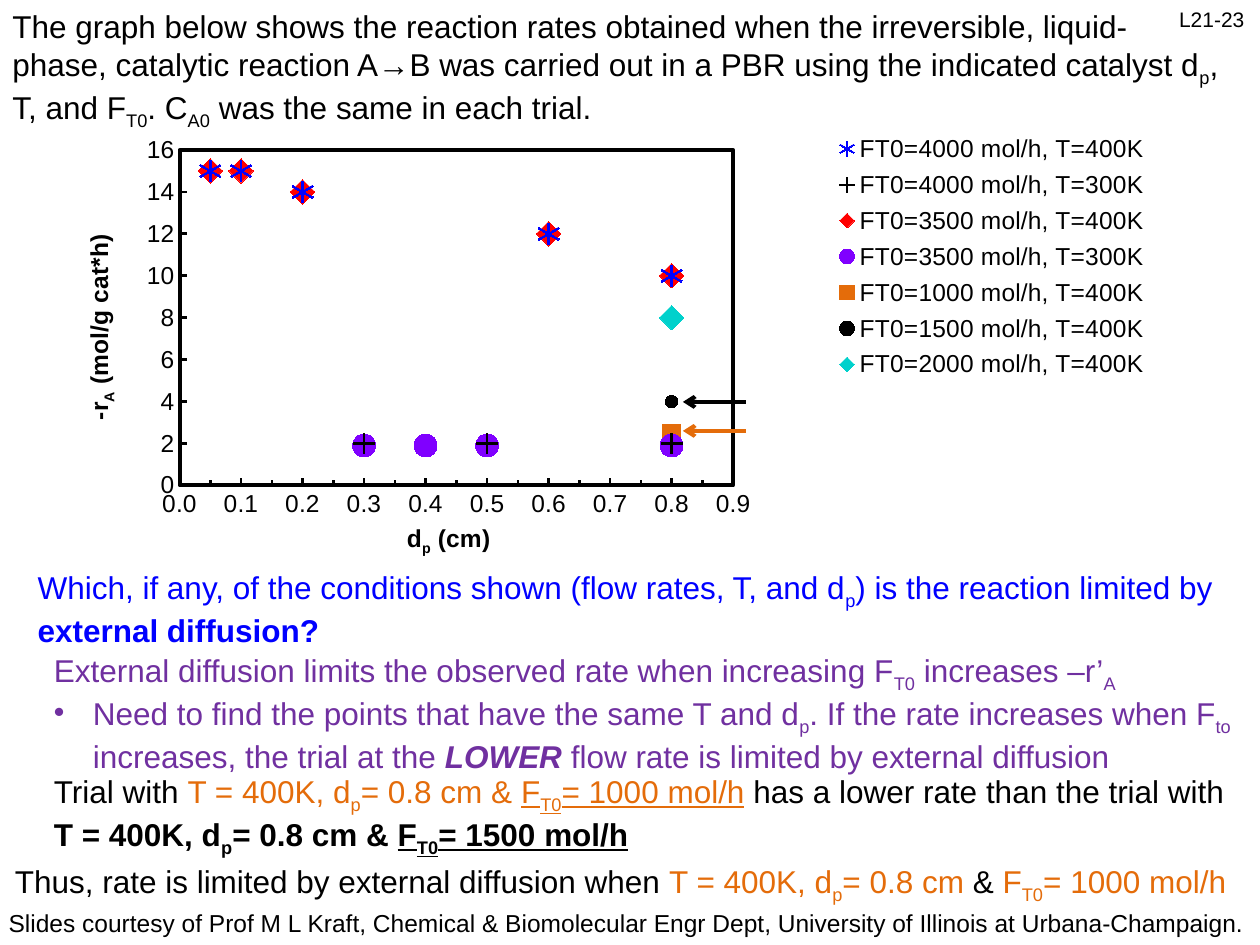
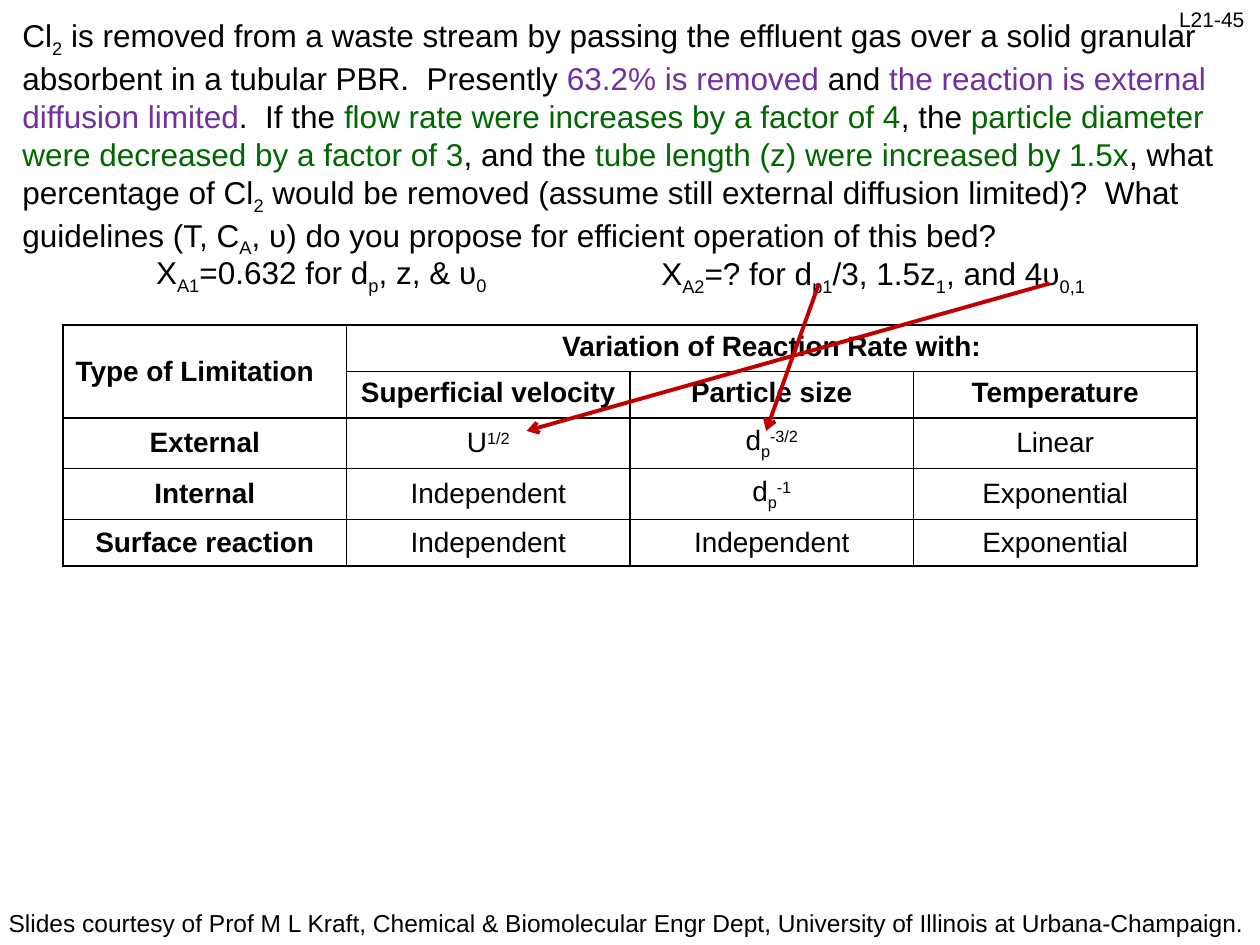
from lxml import etree
from pptx import Presentation
from pptx import util as u
from pptx.chart import data as chart_data
from pptx.dml.color import RGBColor
from pptx.enum import chart as charts, shapes, text
from pptx.oxml import ns, parse_xml

BLACK = RGBColor(0x00, 0x00, 0x00)
BLUE = RGBColor(0x00, 0x00, 0xFF)
PURPLE = RGBColor(0x70, 0x30, 0xA0)
ORANGE = RGBColor(0xE4, 0x6C, 0x0A)
GREEN = RGBColor(0x00, 0x66, 0x00)
DARK_RED = RGBColor(0xC0, 0x00, 0x00)
RED = RGBColor(0xFF, 0x00, 0x00)
VIOLET = RGBColor(0x80, 0x00, 0xFF)
TURQUOISE = RGBColor(0x00, 0xD1, 0xCC)

WIDTH, HEIGHT = 10, 7.5
FONT = "Arial"
BODY_SIZE, TABLE_SIZE, SMALL_SIZE, NUMBER_SIZE = 18, 16, 14, 12
BOLD = {"bold": True}
UNDERLINE = {"underline": True}
BASELINES = {"~": "-25000", "^": "30000"}
CENTER = text.PP_ALIGN.CENTER

CREDIT = ("Slides courtesy of Prof M L Kraft, Chemical & Biomolecular Engr Dept, "
          "University of Illinois at Urbana-Champaign.")

# ~x~ sets a subscript, ^x^ a superscript; a run is (words, colour, format values)
RATE_TEXTS = [
    ((0, 0.01, 10, 1.01), True, [
        [("The graph below shows the reaction rates obtained when the irreversible, liquid-", BLACK)],
        [("phase, catalytic reaction A→B was carried out in a PBR using the indicated catalyst d~p~, "
          "T, and F~T0~. C~A0~ was the same in each trial.", BLACK)]]),
    ((0.2, 4.46, 9.6, 0.71), True, [
        [("Which, if any, of the conditions shown (flow rates, T, and d~p~) is the reaction limited by ", BLUE),
         ("external diffusion?", BLUE, BOLD)]]),
    ((0.33, 5.12, 9.6, 1.01), True, [
        [("External diffusion limits the observed rate when increasing F~T0~ increases –r’~A~", PURPLE)],
        [("• Need to find the points that have the same T and d~p~. If the rate increases when F~to~ "
          "increases, the trial at the ", PURPLE),
         ("LOWER", PURPLE, {"bold": True, "italic": True}),
         (" flow rate is limited by external diffusion", PURPLE)]]),
    ((0.33, 6.08, 9.67, 0.71), True, [
        [("Trial with ", BLACK), ("T = 400K, d~p~= 0.8 cm & ", ORANGE),
         ("F~T0~= 1000 mol/h", ORANGE, UNDERLINE), (" ", ORANGE),
         ("has a lower rate than the trial with ", BLACK),
         ("T = 400K, d~p~= 0.8 cm & ", BLACK, BOLD),
         ("F~T0~= 1500 mol/h", BLACK, {**BOLD, **UNDERLINE})]]),
    ((0.02, 6.79, 9.94, 0.4), False, [
        [("Thus, rate is limited by external diffusion when ", BLACK), ("T = 400K, d~p~= 0.8 cm ", ORANGE),
         ("&", BLACK), (" F~T0~= 1000 mol/h", ORANGE)]]),
]
RATE_ARROWS = [((5.92, 3.42), (5.42, 3.42), ORANGE), ((5.92, 3.19), (5.42, 3.19), BLACK)]

HOT_TRIALS = [(0.05, 15), (0.1, 15), (0.2, 14), (0.6, 12), (0.8, 10)]
TRIALS = [
    (4000, 400, HOT_TRIALS, "STAR", 12, BLUE),
    (4000, 300, [(0.3, 2), (0.5, 2), (0.8, 2)], "PLUS", 12, BLACK),
    (3500, 400, HOT_TRIALS, "DIAMOND", 14, RED),
    (3500, 300, [(0.3, 1.9), (0.4, 1.9), (0.5, 1.9), (0.8, 1.9)], "CIRCLE", 13, VIOLET),
    (1000, 400, [(0.8, 2.5)], "SQUARE", 10, ORANGE),
    (1500, 400, [(0.8, 4)], "CIRCLE", 7, BLACK),
    (2000, 400, [(0.8, 8)], "DIAMOND", 14, TURQUOISE),
]
CHART_BOX = (0.38, 0.97, 9.25, 3.5)
PLOT_SHARE = (0.113, 0.063, 0.475, 0.761)
LEGEND_SHARE = (0.66, 0.01, 0.3, 0.59)
INSIDE, NO_TICK = charts.XL_TICK_MARK.INSIDE, charts.XL_TICK_MARK.NONE
AXES = {
    "category_axis": ("d~p~ (cm)", "0.0", {
        "minimum_scale": 0, "maximum_scale": 0.9, "major_unit": 0.1, "minor_unit": 0.05,
        "minor_tick_mark": INSIDE}),
    "value_axis": ("-r~A~ (mol/g cat*h)", "0", {
        "minimum_scale": 0, "maximum_scale": 16, "major_unit": 2, "minor_tick_mark": NO_TICK}),
}

BED_TEXTS = [
    ((1.14, 1.96, 2.89, 0.4), False, [[("X~A1~=0.632 for d~p~, z, & υ~0~", BLACK)]]),
    ((5.15, 1.97, 3.67, 0.4), False, [[("X~A2~=? for d~p1~/3, 1.5z~1~, and 4υ~0,1~", BLACK)]]),
    ((0.08, 0.08, 9.83, 1.92), True, [
        [("Cl~2~ is removed from a waste stream by passing the effluent gas over a solid granular "
          "absorbent in a tubular PBR.  Presently ", BLACK),
         ("63.2% is removed ", PURPLE), ("and ", BLACK),
         ("the reaction is external diffusion limited", PURPLE), (".  If the ", BLACK),
         ("flow rate were increases by a factor of 4", GREEN), (", the ", BLACK),
         ("particle diameter were decreased by a factor of 3", GREEN), (", and the ", BLACK),
         ("tube length (z) were increased by 1.5x", GREEN),
         (", what percentage of Cl~2~ would be removed (assume still external diffusion limited)?  "
          "What guidelines (T, C~A~, υ) do you propose for efficient operation of this bed?", BLACK)]]),
]
BED_ARROWS = [((6.5, 2.25), (6.08, 3.42), DARK_RED), ((8.33, 2.25), (4.18, 3.42), DARK_RED)]
LIMITATIONS = [
    ["Type of Limitation", "Variation of Reaction Rate with:", "", ""],
    ["", "Superficial velocity", "Particle size", "Temperature"],
    ["External", "U^1/2^", "d~p~^-3/2^", "Linear"],
    ["Internal", "Independent", "d~p~^-1^", "Exponential"],
    ["Surface reaction", "Independent", "Independent", "Exponential"],
]
MERGES = [((0, 0), (1, 0)), ((0, 1), (0, 3))]
TABLE_BOX = (0.5, 2.58, 9, 1.84)
ROW_HEIGHTS = [0.35, 0.37, 0.35, 0.35, 0.36]


def inches(values):
    return [u.Inches(value) for value in values]


def apply(target, values):
    for name, value in values.items():
        setattr(target, name, value)


def split_scripts(words):
    pieces, mark, current = [], None, ""
    for letter in words:
        if letter in BASELINES:
            pieces.append((current, mark))
            mark, current = (None if mark else letter), ""
        else:
            current += letter
    return [piece for piece in pieces + [(current, mark)] if piece[0]]


def write(paragraph, words, colour, values=None, size=BODY_SIZE):
    for piece, mark in split_scripts(words):
        run = paragraph.add_run()
        run.text = piece
        apply(run.font, {"name": FONT, "size": u.Pt(size), **(values or {})})
        run.font.color.rgb = colour
        if mark:
            run.font._element.set("baseline", BASELINES[mark])


def make_bullet(paragraph):
    properties = paragraph._p.get_or_add_pPr()
    indent = u.Inches(0.31)
    properties.set("marL", str(indent))
    properties.set("indent", str(-indent))
    etree.SubElement(properties, ns.qn("a:buChar")).set("char", "•")


def add_text(slide, box, wrap, paragraphs, size=BODY_SIZE):
    frame = slide.shapes.add_textbox(*inches(box)).text_frame
    frame.word_wrap = wrap
    for index, runs in enumerate(paragraphs):
        paragraph = frame.add_paragraph() if index else frame.paragraphs[0]
        for words, *style in runs:
            if words.startswith("• "):
                make_bullet(paragraph)
                words = words[2:]
            write(paragraph, words, *style, size=size)


def add_arrow(slide, start, end, colour):
    arrow = slide.shapes.add_connector(shapes.MSO_CONNECTOR.STRAIGHT, *inches(start + end))
    arrow.line.color.rgb = colour
    arrow.line.width = u.Pt(2.25)
    etree.SubElement(arrow.line._get_or_add_ln(), ns.qn("a:tailEnd")).set("type", "arrow")
    etree.SubElement(arrow._element.spPr, ns.qn("a:effectLst"))


def place(element, index, shares, inner=False):
    for old in element.findall(ns.qn("c:layout")):
        element.remove(old)
    layout = etree.Element(ns.qn("c:layout"))
    manual = etree.SubElement(layout, ns.qn("c:manualLayout"))
    settings = [("layoutTarget", "inner")] if inner else []
    settings += [("xMode", "edge"), ("yMode", "edge")] + list(zip("xywh", shares))
    for name, value in settings:
        etree.SubElement(manual, ns.qn("c:" + name)).set("val", str(value))
    element.insert(index, layout)


def format_axis(axis, title, number_format, values):
    apply(axis, {"has_major_gridlines": False, "major_tick_mark": INSIDE, **values})
    apply(axis.tick_labels, {"number_format": number_format, "number_format_is_linked": False})
    axis.format.line.color.rgb = BLACK
    axis.format.line.width = u.Pt(1.5)
    write(axis.axis_title.text_frame.paragraphs[0], title, BLACK, BOLD, SMALL_SIZE)


def add_rate_chart(slide):
    data = chart_data.XyChartData()
    for flow, temperature, points, *_ in TRIALS:
        series = data.add_series(f"FT0={flow} mol/h, T={temperature}K")
        for diameter, rate in points:
            series.add_data_point(diameter, rate)
    chart = slide.shapes.add_chart(charts.XL_CHART_TYPE.XY_SCATTER, *inches(CHART_BOX), data).chart
    apply(chart, {"has_title": False, "has_legend": True})
    apply(chart.font, {"name": FONT, "size": u.Pt(SMALL_SIZE)})
    chart.font.color.rgb = BLACK
    chart.plots[0].vary_by_categories = False
    for series, (*_, style, size, colour) in zip(chart.plots[0].series, TRIALS):
        series.smooth = False
        series.format.line.fill.background()
        apply(series.marker, {"style": charts.XL_MARKER_STYLE[style], "size": size})
        series.marker.format.fill.solid()
        series.marker.format.fill.fore_color.rgb = colour
        series.marker.format.line.color.rgb = colour
    for name, settings in AXES.items():
        format_axis(getattr(chart, name), *settings)
    chart.value_axis.axis_title.text_frame._txBody.bodyPr.set("rot", "-5400000")
    apply(chart.legend, {"position": charts.XL_LEGEND_POSITION.RIGHT, "include_in_layout": False})
    place(chart.legend._element, 1, LEGEND_SHARE)
    plot_area = chart._chartSpace.chart.plotArea
    place(plot_area, 0, PLOT_SHARE, inner=True)
    plot_area.append(parse_xml(
        f'<c:spPr {ns.nsdecls("c", "a")}><a:noFill/><a:ln w="{u.Pt(2.25)}">'
        f'<a:solidFill><a:srgbClr val="{BLACK}"/></a:solidFill></a:ln></c:spPr>'))


def add_borders(cell):
    properties = cell._tc.get_or_add_tcPr()
    for index, side in enumerate("LRTB"):
        properties.insert(index, parse_xml(
            f'<a:ln{side} {ns.nsdecls("a")} w="{u.Pt(1)}"><a:solidFill>'
            f'<a:srgbClr val="{BLACK}"/></a:solidFill></a:ln{side}>'))


def add_limitation_table(slide):
    size = len(LIMITATIONS), len(LIMITATIONS[0])
    table = slide.shapes.add_table(*size, *inches(TABLE_BOX)).table
    apply(table, {"first_row": False, "horz_banding": False})
    for row, height in zip(table.rows, ROW_HEIGHTS):
        row.height = u.Inches(height)
    for start, end in MERGES:
        table.cell(*start).merge(table.cell(*end))
    for row, entries in enumerate(LIMITATIONS):
        for column, words in enumerate(entries):
            cell = table.cell(row, column)
            cell.fill.background()
            add_borders(cell)
            paragraph = cell.text_frame.paragraphs[0]
            if row > 1 or column == 0:
                cell.vertical_anchor = text.MSO_ANCHOR.MIDDLE
            if row or column:
                paragraph.alignment = CENTER
            write(paragraph, words, BLACK, {"bold": row < 2 or column == 0}, TABLE_SIZE)


def add_slide(presentation, number, texts, arrows, add_object):
    slide = presentation.slides.add_slide(presentation.slide_layouts[6])
    add_text(slide, (-0.03, 7.16, 10.06, 0.34), False, [[(CREDIT, BLACK)]], SMALL_SIZE)
    add_text(slide, (9.26, 0, 0.74, 0.3), False, [[(number, BLACK)]], NUMBER_SIZE)
    add_object(slide)
    for box, wrap, paragraphs in texts:
        add_text(slide, box, wrap, paragraphs)
    for arrow in arrows:
        add_arrow(slide, *arrow)


def main():
    presentation = Presentation()
    apply(presentation, {"slide_width": u.Inches(WIDTH), "slide_height": u.Inches(HEIGHT)})
    add_slide(presentation, "L21-23", RATE_TEXTS, RATE_ARROWS, add_rate_chart)
    add_slide(presentation, "L21-45", BED_TEXTS, BED_ARROWS, add_limitation_table)
    presentation.save("out.pptx")


if __name__ == "__main__":
    main()
